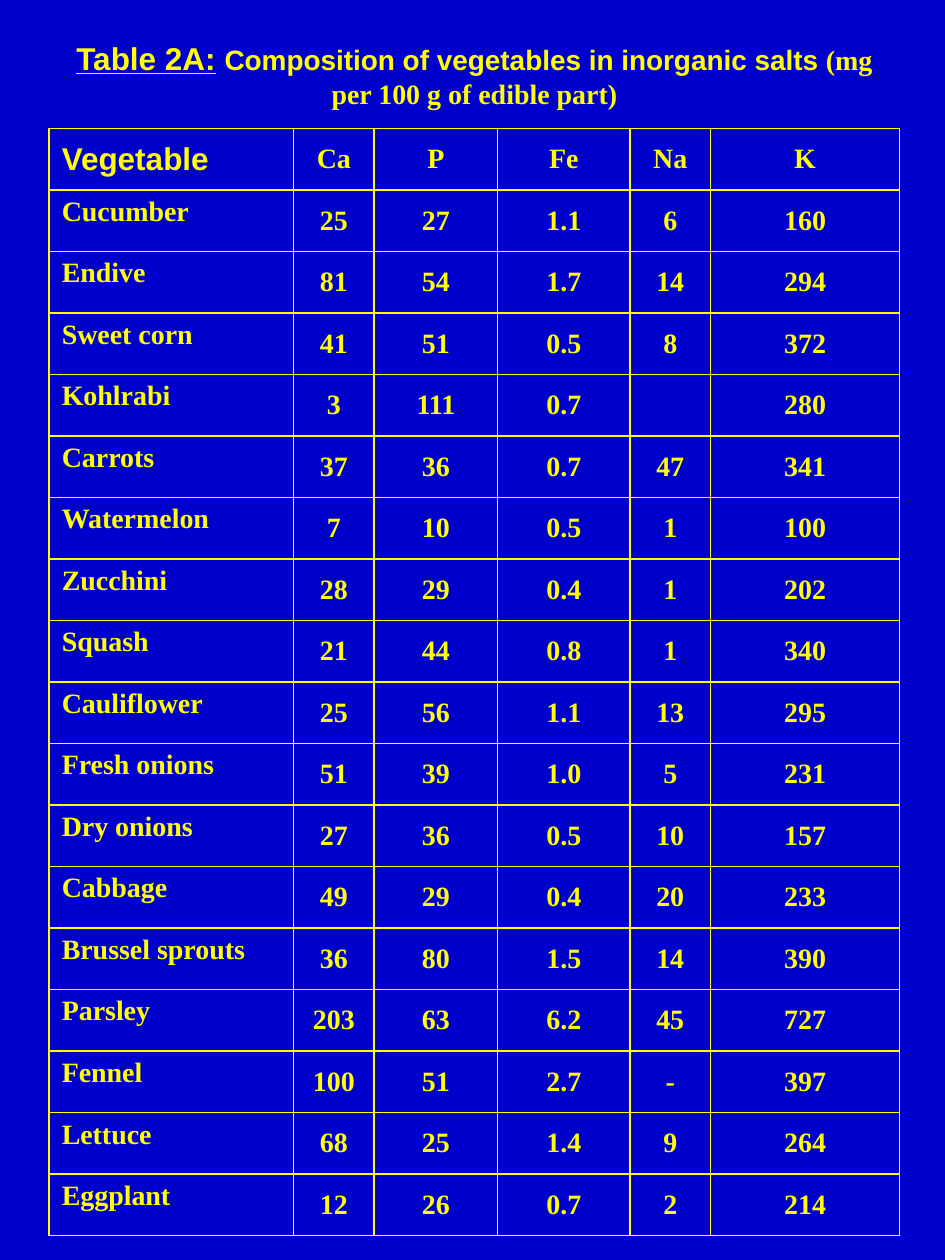
from dataclasses import dataclass
from typing import NamedTuple

from lxml.etree import SubElement
from pptx import Presentation
from pptx.dml.color import RGBColor
from pptx.enum.text import MSO_ANCHOR, PP_ALIGN
from pptx.oxml.ns import qn
from pptx.slide import Slide
from pptx.table import _Cell
from pptx.text.text import Font
from pptx.util import Inches, Pt


@dataclass(frozen=True)
class Theme:
    background: str = "0000CC"
    ink: str = "FFFF00"
    heading_font: str = "Arial"
    body_font: str = "Times New Roman"
    heading_size: int = 18
    body_size: int = 16
    border_width: int = 1


class Area(NamedTuple):
    left: float
    top: float
    width: float
    height: float


class TitlePart(NamedTuple):
    text: str
    font_name: str
    size: int
    underline: bool = False


class Vegetable(NamedTuple):
    name: str
    calcium: str
    phosphorus: str
    iron: str
    sodium: str
    potassium: str


THEME = Theme()
SLIDE_WIDTH = 7.5
SLIDE_HEIGHT = 10
TITLE_AREA = Area(0.39, 0.16, 6.75, 0.86)
TABLE_AREA = Area(0.39, 1.02, 6.75, 8.79)
COLUMN_WIDTHS = (1.94, 0.64, 0.98, 1.05, 0.64, 1.5)
BORDER_SIDES = ("a:lnL", "a:lnR", "a:lnT", "a:lnB")

TITLE_PARTS = (
    TitlePart("Table 2A:", THEME.heading_font, THEME.heading_size, True),
    TitlePart(" ", THEME.heading_font, THEME.heading_size),
    TitlePart("Composition of vegetables in inorganic salts", THEME.heading_font, THEME.body_size),
    TitlePart(" (mg per 100 g of edible part)", THEME.body_font, THEME.body_size),
)

HEADER = Vegetable("Vegetable", "Ca", "P", "Fe", "Na", "K")
VEGETABLES = (
    Vegetable("Cucumber", "25", "27", "1.1", "6", "160"),
    Vegetable("Endive", "81", "54", "1.7", "14", "294"),
    Vegetable("Sweet corn", "41", "51", "0.5", "8", "372"),
    Vegetable("Kohlrabi", "3", "111", "0.7", "", "280"),
    Vegetable("Carrots", "37", "36", "0.7", "47", "341"),
    Vegetable("Watermelon", "7", "10", "0.5", "1", "100"),
    Vegetable("Zucchini", "28", "29", "0.4", "1", "202"),
    Vegetable("Squash", "21", "44", "0.8", "1", "340"),
    Vegetable("Cauliflower", "25", "56", "1.1", "13", "295"),
    Vegetable("Fresh onions", "51", "39", "1.0", "5", "231"),
    Vegetable("Dry onions", "27", "36", "0.5", "10", "157"),
    Vegetable("Cabbage", "49", "29", "0.4", "20", "233"),
    Vegetable("Brussel sprouts", "36", "80", "1.5", "14", "390"),
    Vegetable("Parsley", "203", "63", "6.2", "45", "727"),
    Vegetable("Fennel", "100", "51", "2.7", "-", "397"),
    Vegetable("Lettuce", "68", "25", "1.4", "9", "264"),
    Vegetable("Eggplant", "12", "26", "0.7", "2", "214"),
)


def style_font(font: Font, name: str, size: int) -> None:
    font.name = name
    font.size = Pt(size)
    font.bold = True
    font.color.rgb = RGBColor.from_string(THEME.ink)


def draw_borders(cell: _Cell) -> None:
    properties = cell._tc.get_or_add_tcPr()
    for side in BORDER_SIDES:
        line = SubElement(properties, qn(side), w=str(Pt(THEME.border_width)))
        fill = SubElement(line, qn("a:solidFill"))
        SubElement(fill, qn("a:srgbClr"), val=THEME.ink)


def draw_title(slide: Slide) -> None:
    frame = slide.shapes.add_textbox(*map(Inches, TITLE_AREA)).text_frame
    frame.word_wrap = True
    frame.vertical_anchor = MSO_ANCHOR.MIDDLE
    paragraph = frame.paragraphs[0]
    paragraph.alignment = PP_ALIGN.CENTER
    for part in TITLE_PARTS:
        run = paragraph.add_run()
        run.text = part.text
        style_font(run.font, part.font_name, part.size)
        run.font.underline = part.underline


def draw_cell(cell: _Cell, text: str, is_header: bool, is_name: bool) -> None:
    draw_borders(cell)
    cell.fill.background()
    cell.text = text
    top_aligned = is_name and not is_header
    cell.vertical_anchor = MSO_ANCHOR.TOP if top_aligned else MSO_ANCHOR.MIDDLE
    paragraph = cell.text_frame.paragraphs[0]
    paragraph.alignment = PP_ALIGN.LEFT if is_name else PP_ALIGN.CENTER
    if is_header and is_name:
        style_font(paragraph.font, THEME.heading_font, THEME.heading_size)
    else:
        style_font(paragraph.font, THEME.body_font, THEME.body_size)


def draw_table(slide: Slide) -> None:
    records = (HEADER, *VEGETABLES)
    table = slide.shapes.add_table(
        len(records), len(COLUMN_WIDTHS), *map(Inches, TABLE_AREA)
    ).table
    table.first_row = False
    table.horz_banding = False
    for column, width in zip(table.columns, COLUMN_WIDTHS):
        column.width = Inches(width)
    for row_index, record in enumerate(records):
        for column_index, text in enumerate(record):
            cell = table.cell(row_index, column_index)
            draw_cell(cell, text, row_index == 0, column_index == 0)


def main() -> None:
    presentation = Presentation()
    presentation.slide_width = Inches(SLIDE_WIDTH)
    presentation.slide_height = Inches(SLIDE_HEIGHT)
    slide = presentation.slides.add_slide(presentation.slide_layouts[6])
    slide.background.fill.solid()
    slide.background.fill.fore_color.rgb = RGBColor.from_string(THEME.background)
    draw_title(slide)
    draw_table(slide)
    presentation.save("out.pptx")


if __name__ == "__main__":
    main()
